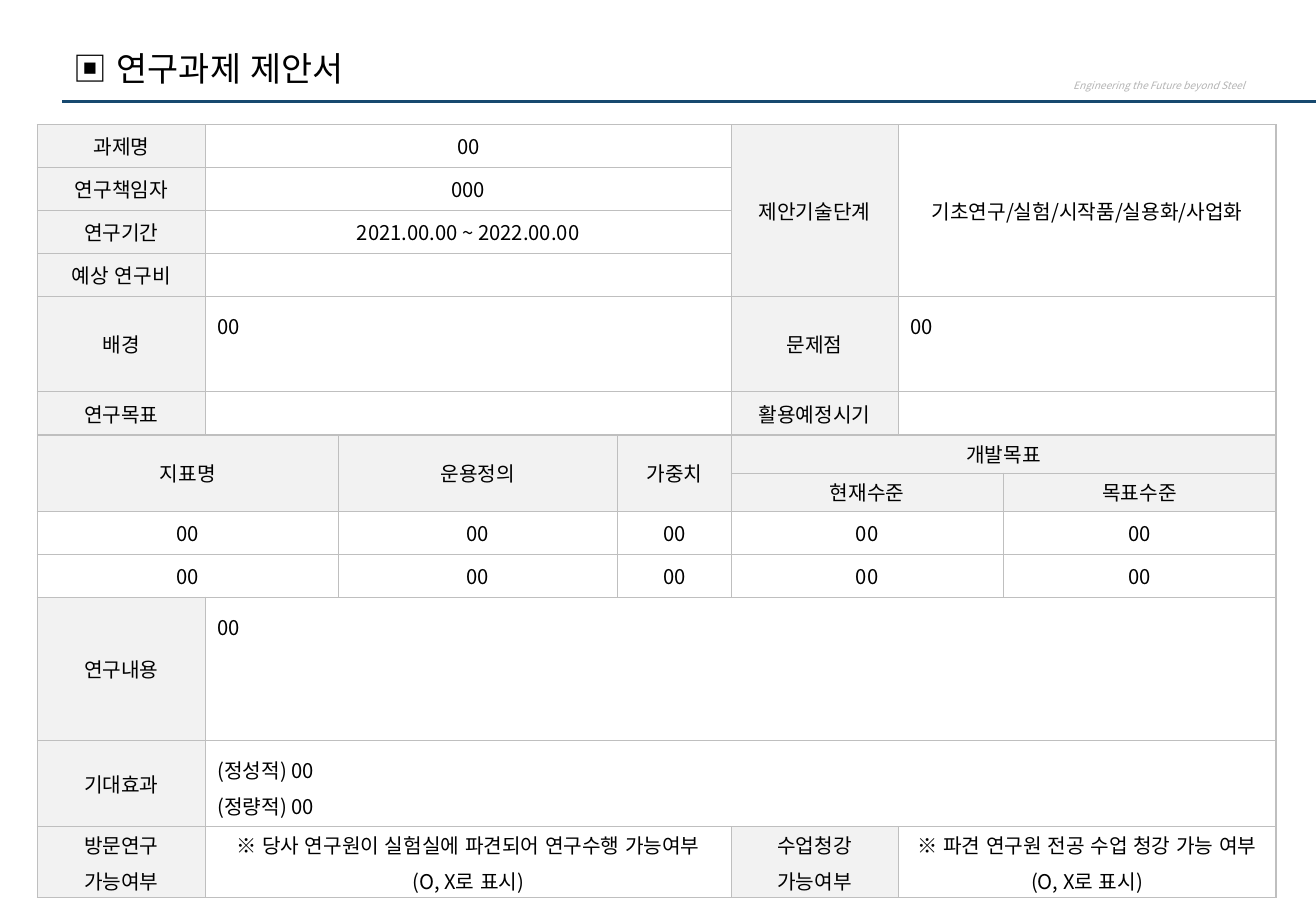
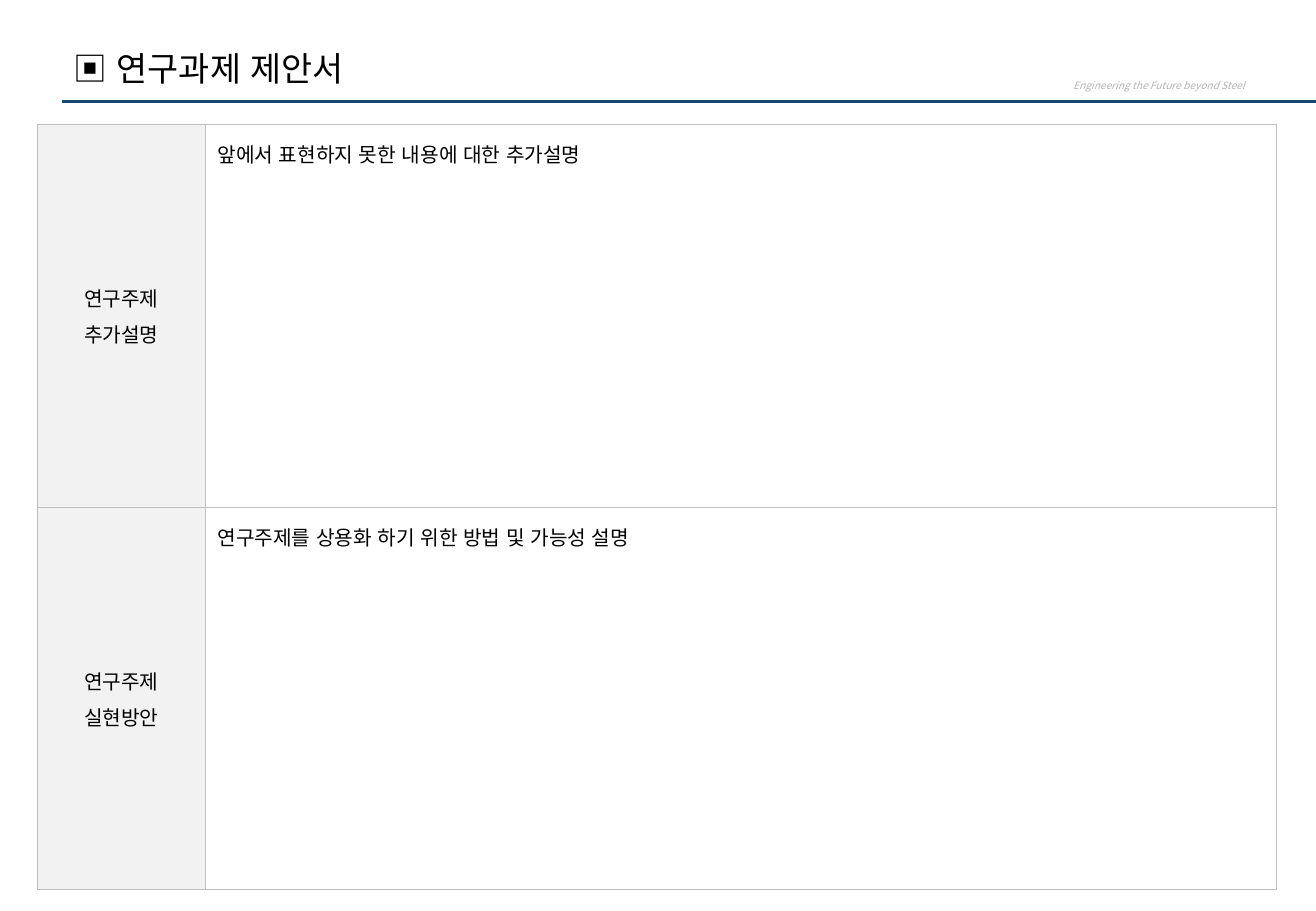
import dataclasses

import pptx
import pptx.dml.color
import pptx.enum.lang
import pptx.enum.shapes
import pptx.enum.text
import pptx.oxml.xmlchemy
import pptx.util

Pt = pptx.util.Pt
RGB = pptx.dml.color.RGBColor.from_string
OxmlElement = pptx.oxml.xmlchemy.OxmlElement
ALIGN = pptx.enum.text.PP_ALIGN
ANCHOR = pptx.enum.text.MSO_ANCHOR


@dataclasses.dataclass(frozen=True)
class Theme:
    font: str = "Noto Sans CJK KR"
    ink: str = "000000"
    muted: str = "B4B4B4"
    rule: str = "17496F"
    border: str = "BFBFBF"
    label_fill: str = "F2F2F2"
    white: str = "FFFFFF"
    title_size: float = 20
    cell_size: float = 12
    slogan_size: float = 6
    border_width: float = 0.75
    rule_width: float = 2.25
    para_gap: float = 4


THEME = Theme()


@dataclasses.dataclass(frozen=True)
class Style:
    fill: str
    align: ALIGN
    anchor: ANCHOR
    top: float = 0
    bottom: float = 0
    side: float = 7.2


LABEL = Style(THEME.label_fill, ALIGN.CENTER, ANCHOR.MIDDLE)
VALUE = Style(THEME.white, ALIGN.CENTER, ANCHOR.MIDDLE)
WIDE_VALUE = dataclasses.replace(VALUE, side=0)  # keeps long text on one line
NOTE = Style(THEME.white, ALIGN.LEFT, ANCHOR.TOP, 8.64, 3.6)


@dataclasses.dataclass(frozen=True)
class Cell:
    row: int
    col: int
    text: str  # one paragraph per line
    style: Style
    cols: int = 1
    rows: int = 1


@dataclasses.dataclass(frozen=True)
class Grid:
    widths: list[float]
    heights: list[float]
    cells: list[Cell]


TABLE_LEFT, TABLE_TOP = 22.2, 73.8

# Slide 1: proposal form
FORM = Grid(
    widths=[99.5, 78.8, 165.6, 67.3, 99, 62.2, 161.8],
    heights=[25.5] * 4 + [56.5, 25.6, 22.6, 22.6, 25.5, 25.5, 85, 51.2, 42],
    cells=[
        Cell(0, 0, "과제명", LABEL),
        Cell(0, 1, "00", VALUE, cols=3),
        Cell(0, 4, "제안기술단계", LABEL, rows=4),
        Cell(0, 5, "기초연구/실험/시작품/실용화/사업화", WIDE_VALUE, cols=2, rows=4),
        Cell(1, 0, "연구책임자", LABEL),
        Cell(1, 1, "000", VALUE, cols=3),
        Cell(2, 0, "연구기간", LABEL),
        Cell(2, 1, "2021.00.00 ~ 2022.00.00", VALUE, cols=3),
        Cell(3, 0, "예상 연구비", LABEL),
        Cell(3, 1, "", VALUE, cols=3),
        Cell(4, 0, "배경", LABEL),
        Cell(4, 1, "00", NOTE, cols=3),
        Cell(4, 4, "문제점", LABEL),
        Cell(4, 5, "00", NOTE, cols=2),
        Cell(5, 0, "연구목표", LABEL),
        Cell(5, 1, "", VALUE, cols=3),
        Cell(5, 4, "활용예정시기", LABEL),
        Cell(5, 5, "", VALUE, cols=2),
        # Indicators
        Cell(6, 0, "지표명", LABEL, cols=2, rows=2),
        Cell(6, 2, "운용정의", LABEL, rows=2),
        Cell(6, 3, "가중치", LABEL, rows=2),
        Cell(6, 4, "개발목표", LABEL, cols=3),
        Cell(7, 4, "현재수준", LABEL, cols=2),
        Cell(7, 6, "목표수준", LABEL),
        *(Cell(row, col, "00", VALUE, cols=cols) for row in (8, 9)
          for col, cols in ((0, 2), (2, 1), (3, 1), (4, 2), (6, 1))),
        # Content, effects and visits
        Cell(10, 0, "연구내용", LABEL),
        Cell(10, 1, "00", NOTE, cols=6),
        Cell(11, 0, "기대효과", LABEL),
        Cell(11, 1, "(정성적) 00\n(정량적) 00", NOTE, cols=6),
        Cell(12, 0, "방문연구\n가능여부", LABEL),
        Cell(12, 1, "※ 당사 연구원이 실험실에 파견되어 연구수행 가능여부\n(O, X로 표시)",
             VALUE, cols=3),
        Cell(12, 4, "수업청강\n가능여부", LABEL),
        Cell(12, 5, "※ 파견 연구원 전공 수업 청강 가능 여부\n(O, X로 표시)", VALUE, cols=2),
    ],
)

# Slide 2: further explanation
DETAILS = Grid(
    widths=[99.5, 634.7],
    heights=[226.8] * 2,
    cells=[
        Cell(0, 0, "연구주제\n추가설명", LABEL),
        Cell(0, 1, "앞에서 표현하지 못한 내용에 대한 추가설명", NOTE),
        Cell(1, 0, "연구주제\n실현방안", LABEL),
        Cell(1, 1, "연구주제를 상용화 하기 위한 방법 및 가능성 설명", NOTE),
    ],
)


def put_text(tf, text: str, *, size: float, color: str = THEME.ink,
             align: ALIGN = ALIGN.LEFT, italic: bool = False) -> None:
    for i, line in enumerate(text.split("\n")):
        p = tf.add_paragraph() if i else tf.paragraphs[0]
        p.alignment = align
        p.space_before = Pt(THEME.para_gap if i else 0)
        if not line:  # keeps an empty row from growing
            end = OxmlElement("a:endParaRPr")
            end.set("sz", str(int(size * 100)))
            p._p.append(end)
            continue
        r = p.add_run()
        r.text = line
        r.font.size = Pt(size)
        r.font.italic = italic
        r.font.name = THEME.font
        r.font.color.rgb = RGB(color)
        r.font.language_id = pptx.enum.lang.MSO_LANGUAGE_ID.KOREAN
        ea = OxmlElement("a:ea")
        ea.set("typeface", THEME.font)
        r.font._element.append(ea)


def set_borders(cell) -> None:
    tc_pr = cell._tc.get_or_add_tcPr()
    for i, side in enumerate(("a:lnL", "a:lnR", "a:lnT", "a:lnB")):
        ln = OxmlElement(side)
        ln.set("w", str(Pt(THEME.border_width)))
        fill, color = OxmlElement("a:solidFill"), OxmlElement("a:srgbClr")
        color.set("val", THEME.border)
        fill.append(color)
        ln.append(fill)
        tc_pr.insert(i, ln)


def draw_table(s, grid: Grid) -> None:
    table = s.shapes.add_table(
        len(grid.heights), len(grid.widths), Pt(TABLE_LEFT), Pt(TABLE_TOP),
        Pt(sum(grid.widths)), Pt(sum(grid.heights))).table
    table.first_row = table.horz_banding = False
    for column, width in zip(table.columns, grid.widths):
        column.width = Pt(width)
    for row, height in zip(table.rows, grid.heights):
        row.height = Pt(height)
    for item in grid.cells:
        style = item.style
        for row in range(item.row, item.row + item.rows):
            for col in range(item.col, item.col + item.cols):
                part = table.cell(row, col)
                part.fill.solid()
                part.fill.fore_color.rgb = RGB(style.fill)
                part.margin_top, part.margin_bottom = Pt(style.top), Pt(style.bottom)
                part.margin_left = part.margin_right = Pt(style.side)
                set_borders(part)
                if (row, col) != (item.row, item.col):
                    put_text(part.text_frame, "", size=THEME.cell_size)
        cell = table.cell(item.row, item.col)
        if item.rows * item.cols > 1:
            cell.merge(table.cell(item.row + item.rows - 1, item.col + item.cols - 1))
        cell.vertical_anchor = style.anchor
        put_text(cell.text_frame, item.text, size=THEME.cell_size, align=style.align)


def set_up_layout(layout, s) -> None:
    """Place the title and move the shared slogan and rule into the layout."""
    for ph in list(layout.placeholders):
        if ph.placeholder_format.idx:
            layout.shapes.element.remove(ph.element)
        else:
            ph.left, ph.top, ph.width, ph.height = Pt(36.4), Pt(20.9), Pt(450.7), Pt(38.9)
    slogan = s.shapes.add_textbox(Pt(628.8), Pt(43.6), Pt(116), Pt(14.4))
    slogan.text_frame.word_wrap = False
    put_text(slogan.text_frame, "Engineering the Future beyond Steel",
             size=THEME.slogan_size, color=THEME.muted, align=ALIGN.RIGHT, italic=True)
    rule = s.shapes.add_connector(pptx.enum.shapes.MSO_CONNECTOR.STRAIGHT,
                                  Pt(36.8), Pt(60.2), Pt(780), Pt(60.2))
    rule.line.color.rgb = RGB(THEME.rule)
    rule.line.width = Pt(THEME.rule_width)
    rule._element.spPr.append(OxmlElement("a:effectLst"))
    for sp in (slogan, rule):
        layout.shapes.element.append(sp.element)


def main() -> None:
    prs = pptx.Presentation()
    prs.slide_width, prs.slide_height = Pt(780), Pt(540)
    layout = prs.slide_layouts[5]
    for i, grid in enumerate((FORM, DETAILS)):
        s = prs.slides.add_slide(layout)
        if i == 0:
            set_up_layout(layout, s)
        tf = s.shapes.title.text_frame
        tf.auto_size = pptx.enum.text.MSO_AUTO_SIZE.NONE
        tf.vertical_anchor = ANCHOR.MIDDLE
        put_text(tf, "▣ 연구과제 제안서", size=THEME.title_size)
        draw_table(s, grid)
    prs.save("out.pptx")


if __name__ == "__main__":
    main()
